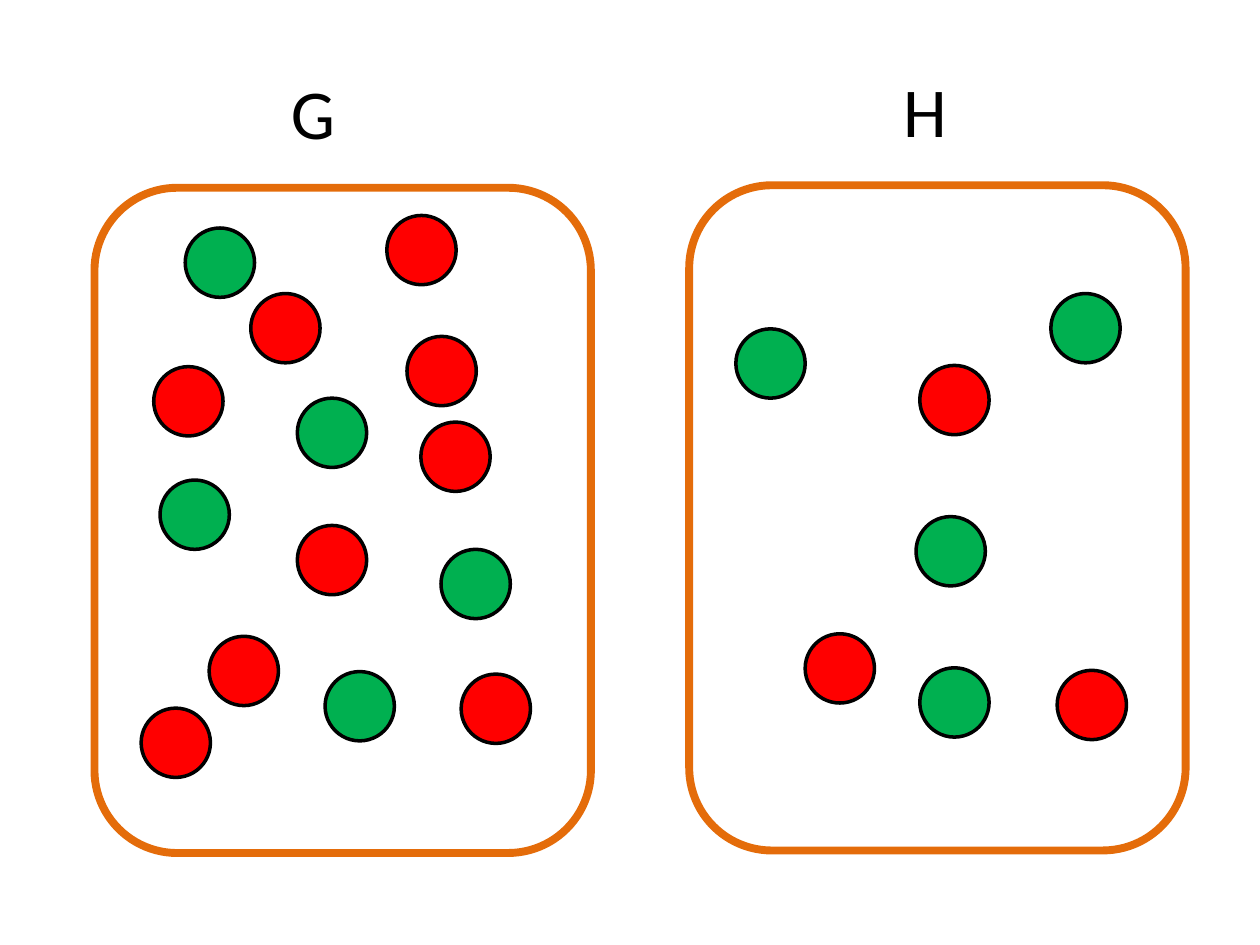
from pptx import Presentation
from pptx.dml.color import RGBColor
from pptx.enum.shapes import MSO_SHAPE
from pptx.enum.text import MSO_AUTO_SIZE
from pptx.util import Inches, Pt

ROUNDED, OVAL = MSO_SHAPE.ROUNDED_RECTANGLE, MSO_SHAPE.OVAL
FIT_SHAPE = MSO_AUTO_SIZE.SHAPE_TO_FIT_TEXT
COLORS = {"white": "FFFFFF", "orange": "E46C0A", "green": "00B050",
          "red": "FF0000", "black": "000000"}

prs = Presentation()
prs.slide_width, prs.slide_height = Inches(10), Inches(7.5)
slide = prs.slides.add_slide(prs.slide_layouts[6])

# The slide is a grid of 10 columns by 7.5 rows of square cells
CELL = prs.slide_width / 10
BAG_WIDTH, BAG_HEIGHT = 3.94, 5.28
COUNTER_SIZE = 0.55
LABEL_WIDTH, LABEL_HEIGHT = 0.58, 0.77


def cells(*values):
    return [round(value * CELL) for value in values]


def add_outlined(group, preset, box, fill, line, weight):
    shape = group.shapes.add_shape(preset, *cells(*box))
    shape.shadow.inherit = False
    shape.fill.solid()
    shape.fill.fore_color.rgb = RGBColor.from_string(COLORS[fill])
    shape.line.color.rgb = RGBColor.from_string(COLORS[line])
    shape.line.width = Pt(weight)


# Each bag: letter, label corner, bag corner, counter corners by colour
bags = [
    ("H", (7.07, 0.49), (5.47, 1.47), {
        "green": [(5.84, 2.61), (7.27, 4.1), (8.34, 2.33), (7.3, 5.3)],
        "red": [(7.3, 2.9), (6.39, 5.03), (8.39, 5.32)],
    }),
    ("G", (2.21, 0.5), (0.75, 1.49), {
        "green": [(2.36, 3.16), (3.5, 4.36), (1.47, 1.81), (2.58, 5.33),
                  (1.27, 3.81)],
        "red": [(1.22, 2.91), (3.34, 3.35), (1.66, 5.05), (3.66, 5.35),
                (3.07, 1.71), (1.12, 5.62), (1.99, 2.33), (2.36, 4.17),
                (3.23, 2.67)],
    }),
]

for letter, label_corner, bag_corner, counters in bags:
    # Bag with its counters
    bag = slide.shapes.add_group_shape()
    add_outlined(bag, ROUNDED, (*bag_corner, BAG_WIDTH, BAG_HEIGHT),
                 "white", "orange", 4.5)
    for color, corners in counters.items():
        for corner in corners:
            add_outlined(bag, OVAL, (*corner, COUNTER_SIZE, COUNTER_SIZE),
                         color, "black", 2)

    # Letter above the bag
    label = slide.shapes.add_textbox(
        *cells(*label_corner, LABEL_WIDTH, LABEL_HEIGHT))
    label.text_frame.word_wrap = True
    label.text_frame.auto_size = FIT_SHAPE
    run = label.text_frame.paragraphs[0].add_run()
    run.text = letter
    run.font.name = "Calibri"
    run.font.size = Pt(40)
    run.font.color.rgb = RGBColor.from_string(COLORS["black"])

prs.save("out.pptx")
